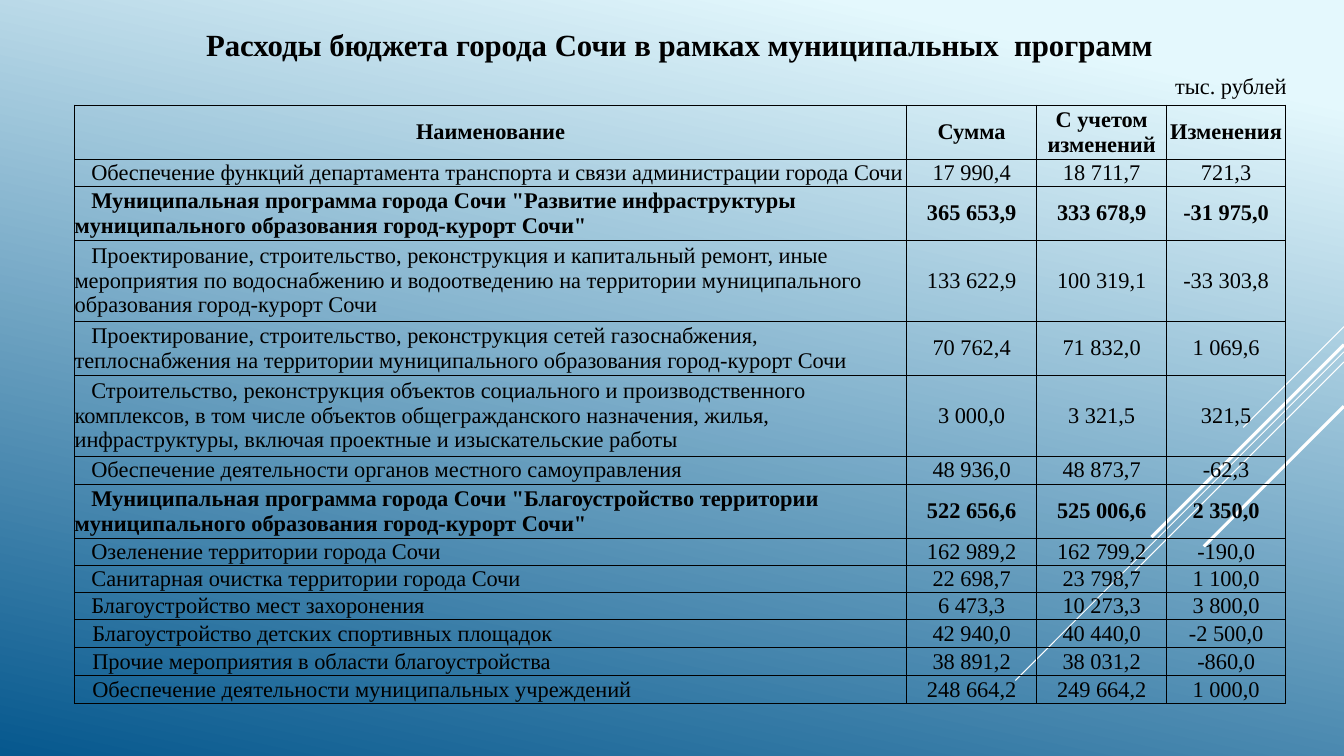
from lxml import etree
from pptx import Presentation
from pptx.dml.color import RGBColor
from pptx.enum.shapes import MSO_CONNECTOR
from pptx.enum.text import MSO_ANCHOR, MSO_AUTO_SIZE, PP_ALIGN
from pptx.oxml.ns import qn
from pptx.util import Pt

STRAIGHT = MSO_CONNECTOR.STRAIGHT
MIDDLE = MSO_ANCHOR.MIDDLE
NO_FIT = MSO_AUTO_SIZE.NONE
LEFT, CENTER = PP_ALIGN.LEFT, PP_ALIGN.CENTER

COLORS = {"sky": "E4F8FD", "deep": "06588E", "ray": "FFFFFF", "ink": "000000"}
FONT = "Times New Roman"
BODY_SIZE = 16
SLIDE_W, SLIDE_H = 960, 540

COL_WIDTHS = [594.3, 92.9, 92.9, 84.9]
LINE_H = 19.29
HEADER = ("Наименование", "Сумма", "С учетом изменений", "Изменения")
PROGRAM = "Муниципальная программа"
ROWS = [
    (1, "Обеспечение функций департамента транспорта и связи администрации города Сочи",
     "17 990,4", "18 711,7", "721,3"),
    (2, 'Муниципальная программа города Сочи "Развитие инфраструктуры муниципального образования город-курорт Сочи"',
     "365 653,9", "333 678,9", "-31 975,0"),
    (3, "Проектирование, строительство, реконструкция и капитальный ремонт, иные мероприятия по водоснабжению "
        "и водоотведению на территории муниципального образования город-курорт Сочи",
     "133 622,9", "100 319,1", "-33 303,8"),
    (2, "Проектирование, строительство, реконструкция сетей газоснабжения, теплоснабжения на территории "
        "муниципального образования город-курорт Сочи",
     "70 762,4", "71 832,0", "1 069,6"),
    (3, "Строительство, реконструкция объектов социального и производственного комплексов, в том числе объектов "
        "общегражданского назначения, жилья, инфраструктуры, включая проектные и изыскательские работы",
     "3 000,0", "3 321,5", "321,5"),
    (1.04, "Обеспечение деятельности органов местного самоуправления", "48 936,0", "48 873,7", "-62,3"),
    (2, 'Муниципальная программа города Сочи "Благоустройство территории муниципального образования город-курорт Сочи"',
     "522 656,6", "525 006,6", "2 350,0"),
    (1, "Озеленение территории города Сочи", "162 989,2", "162 799,2", "-190,0"),
    (1, "Санитарная очистка территории города Сочи", "22 698,7", "23 798,7", "1 100,0"),
    (1, "Благоустройство мест захоронения", "6 473,3", "10 273,3", "3 800,0"),
    (1.04, "Благоустройство детских спортивных площадок", "42 940,0", "40 440,0", "-2 500,0"),
    (1.04, "Прочие мероприятия в области благоустройства", "38 891,2", "38 031,2", "-860,0"),
    (1.04, "Обеспечение деятельности муниципальных учреждений", "248 664,2", "249 664,2", "1 000,0"),
]
RAYS = [(233.3, 72, 0.75), (251.3, 234.7, 0.75), (258.5, 149.2, 0.75),
        (246.2, 137.5, 2.25), (290.2, 100.1, 2.25)]


def rgb(name):
    return RGBColor.from_string(COLORS[name])


def write(p, text, size, bold=False, align=LEFT):
    p.alignment = align
    r = p.add_run()
    r.text = text
    r.font.name = FONT
    r.font.size = Pt(size)
    r.font.bold = bold
    r.font.color.rgb = rgb("ink")


def paint_background(s):
    fill = s.background.fill
    fill.gradient()
    fill.gradient_angle = 258
    for stop, (pos, name) in zip(fill.gradient_stops, [(0.1, "sky"), (1, "deep")]):
        stop.position = pos
        stop.color.rgb = rgb(name)


def add_rays(s, x, y, w, h):
    right = x + w
    for top, run, weight in RAYS:
        ray = s.shapes.add_connector(STRAIGHT, Pt(right), Pt(y + top),
                                     Pt(right - run), Pt(y + top + run))
        ray.line.color.rgb = rgb("ray")
        ray.line.width = Pt(weight)
        etree.SubElement(ray._element.spPr, qn("a:effectLst"))


def add_title(s, x, y, w, h):
    sp = s.shapes.title
    sp.left, sp.top, sp.width, sp.height = Pt(x), Pt(y), Pt(w), Pt(h)
    tf = sp.text_frame
    tf.auto_size = NO_FIT
    tf.word_wrap = True
    tf.vertical_anchor = MIDDLE
    tf.margin_left = tf.margin_right = 0
    write(tf.paragraphs[0], "Расходы бюджета города Сочи в рамках муниципальных  программ",
          22, True, CENTER)


def add_units(s, x, y, w, h):
    tf = s.shapes.add_textbox(Pt(x), Pt(y), Pt(w), Pt(h)).text_frame
    tf.word_wrap = True
    write(tf.paragraphs[0], "тыс. рублей", BODY_SIZE)


def add_borders(cell):
    tc_pr = cell._tc.get_or_add_tcPr()
    for i, side in enumerate(("lnL", "lnR", "lnT", "lnB")):
        ln = etree.Element(qn("a:" + side), w=str(Pt(0.5)))
        fill = etree.SubElement(ln, qn("a:solidFill"))
        etree.SubElement(fill, qn("a:srgbClr"), val=COLORS["ink"])
        tc_pr.insert(i, ln)


def fill_cell(cell, text, bold, align, inset):
    cell.margin_left = cell.margin_right = cell.margin_top = Pt(inset)
    cell.margin_bottom = 0
    cell.vertical_anchor = MIDDLE
    cell.fill.background()
    add_borders(cell)
    p = cell.text_frame.paragraphs[0]
    write(p, text, BODY_SIZE, bold, align)
    if align == LEFT:
        p._p.get_or_add_pPr().set("indent", str(Pt(12)))


def add_budget_table(s, x, y, w, h):
    rows = [(2, *HEADER)] + ROWS
    table = s.shapes.add_table(len(rows), len(COL_WIDTHS), Pt(x), Pt(y), Pt(w), Pt(h)).table
    table.first_row = table.horz_banding = False
    for col, width in zip(table.columns, COL_WIDTHS):
        col.width = Pt(width)
    for i, (lines, *texts) in enumerate(rows):
        table.rows[i].height = Pt(lines * LINE_H)
        bold = i == 0 or texts[0].startswith(PROGRAM)
        inset = 0.72 if i >= len(rows) - 3 else 0
        for j, text in enumerate(texts):
            align = LEFT if i and j == 0 else CENTER
            fill_cell(table.cell(i, j), text, bold, align, inset)


def main():
    prs = Presentation()
    prs.slide_width, prs.slide_height = Pt(SLIDE_W), Pt(SLIDE_H)
    s = prs.slides.add_slide(prs.slide_layouts[5])
    paint_background(s)
    add_rays(s, 0, 0, SLIDE_W, SLIDE_H)
    add_title(s, 139, 14.4, 692.6, 33.8)
    add_units(s, 832.3, 48.2, 108.7, 26.6)
    add_budget_table(s, 53.3, 75, sum(COL_WIDTHS), 427)
    prs.save("out.pptx")


if __name__ == "__main__":
    main()
